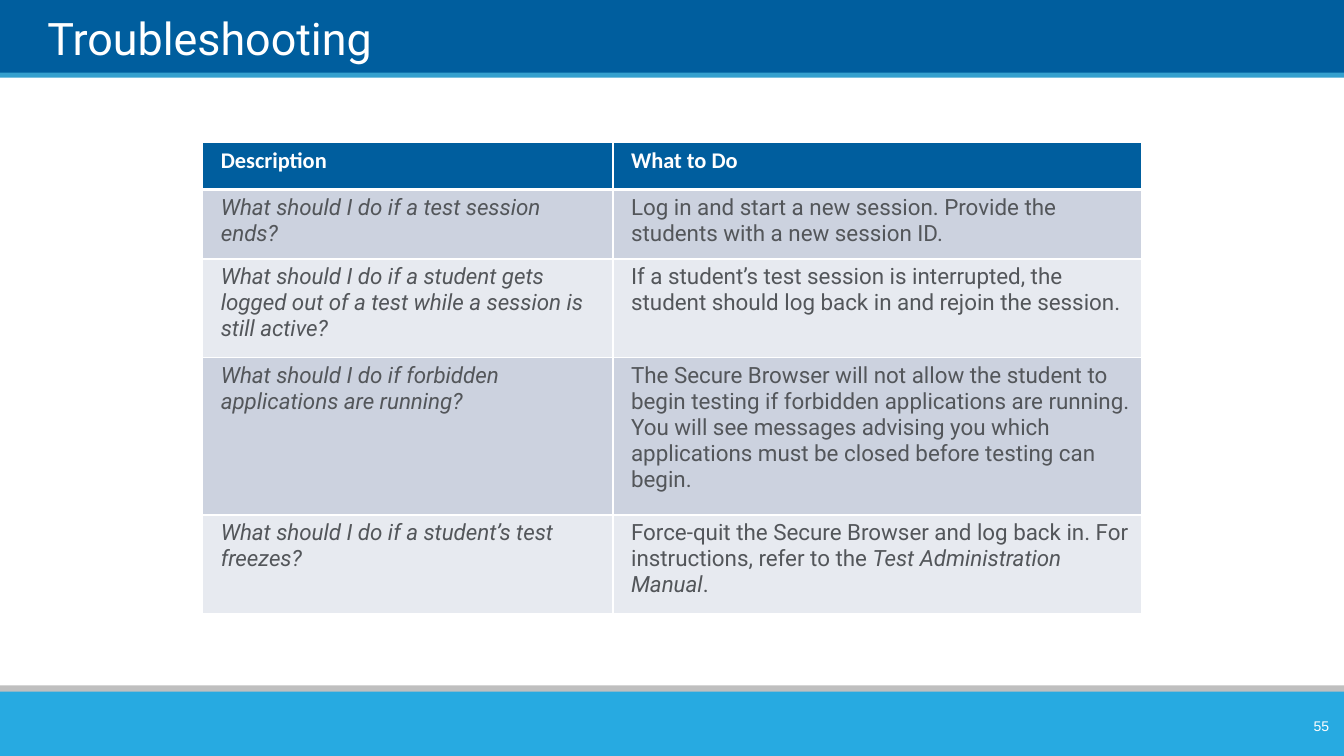
from dataclasses import dataclass

from lxml.etree import SubElement
from pptx import Presentation
from pptx.dml.color import RGBColor as RGB
from pptx.enum.shapes import MSO_SHAPE as Shape
from pptx.enum.text import MSO_ANCHOR as Anchor, MSO_AUTO_SIZE as AutoSize, PP_ALIGN as Align
from pptx.oxml.ns import qn
from pptx.util import Inches, Pt

WIDTH, HEIGHT = Inches(13.33), Inches(7.5)


@dataclass(frozen=True)
class Theme:
    navy: str = "005E9E"
    blue: str = "35A0CE"
    sky: str = "27AAE1"
    grey: str = "BFBFBF"
    white: str = "FFFFFF"
    ink: str = "53565A"
    bands: tuple = ("CCD2DF", "E7EAF0")
    title_size: int = 32
    table_size: int = 16
    number_size: int = 10
    body_font: str = "Roboto"
    header_font: str = "Calibri"
    number_font: str = "Arial"


THEME = Theme()

BARS = [
    (0, 9.87, THEME.navy),
    (9.6, 0.67, THEME.blue),
    (90.67, 1.87, THEME.grey),
    (91.47, 8.53, THEME.sky),
]
COLUMNS = [30.53, 39.31]
ROWS = [6.27, 9.2, 13.07, 20.8, 13.07]
HEADERS = ["Description", "What to Do"]
ISSUES = [
    ("What should I do if a test session ends?",
     [("Log in and start a new session. Provide the students with a new session ID.", False)]),
    ("What should I do if a student gets logged out of a test while a session is still active?",
     [("If a student’s test session is interrupted, the student should log back in "
       "and rejoin the session.", False)]),
    ("What should I do if forbidden applications are running?",
     [("The Secure Browser will not allow the student to begin testing if forbidden "
       "applications are running. You will see messages advising you which applications "
       "must be closed before testing can begin.", False)]),
    ("What should I do if a student’s test freezes?",
     [("Force-quit the Secure Browser and log back in. For instructions, refer to the ", False),
      ("Test Administration Manual", True), (".", False)]),
]


def across(percent):
    return round(WIDTH * percent / 100)


def down(percent):
    return round(HEIGHT * percent / 100)


def box(x, y, w, h):
    return across(x), down(y), across(w), down(h)


def add_run(p, text, size, font, color, bold=False, italic=False):
    r = p.add_run()
    r.text = text
    r.font.size, r.font.name = Pt(size), font
    r.font.bold, r.font.italic = bold, italic
    r.font.color.rgb = RGB.from_string(color)


def add_bar(slide, top, height, color):
    sp = slide.shapes.add_shape(Shape.RECTANGLE, *box(0, top, 100, height))
    sp.shadow.inherit = False
    sp.fill.solid()
    sp.fill.fore_color.rgb = RGB.from_string(color)
    sp.line.fill.background()


def set_title(slide, text):
    sp = slide.shapes.title
    sp.left, sp.top, sp.width, sp.height = box(3.53, 0.93, 90.4, 7.6)
    tf = sp.text_frame
    tf.auto_size, tf.vertical_anchor = AutoSize.NONE, Anchor.BOTTOM
    tf.margin_left = tf.margin_right = tf.margin_top = tf.margin_bottom = 0
    p = tf.paragraphs[0]
    p.alignment = Align.LEFT
    add_run(p, text, THEME.title_size, THEME.body_font, THEME.white)
    slide.shapes._spTree.append(sp._element)


def set_borders(cell, bottom):
    tcPr = cell._tc.get_or_add_tcPr()
    for side, width in (("L", 1), ("R", 1), ("T", 1), ("B", bottom)):
        ln = SubElement(tcPr, qn(f"a:ln{side}"), w=str(Pt(width)))
        fill = SubElement(ln, qn("a:solidFill"))
        SubElement(fill, qn("a:srgbClr"), val=THEME.white)


def fill_cell(cell, runs, fill, font, color, bold=False, bottom=1):
    set_borders(cell, bottom)
    cell.fill.solid()
    cell.fill.fore_color.rgb = RGB.from_string(fill)
    cell.margin_left = cell.margin_right = Inches(0.1)
    cell.margin_top = cell.margin_bottom = Inches(0.05)
    p = cell.text_frame.paragraphs[0]
    p._p.get_or_add_pPr().set("marL", str(Inches(0.08)))
    p.space_after = Pt(4)
    for text, italic in runs:
        add_run(p, text, THEME.table_size, font, color, bold, italic)


def add_issue_table(slide):
    frame = slide.shapes.add_table(len(ROWS), len(COLUMNS),
                                   *box(15.08, 18.8, sum(COLUMNS), sum(ROWS)))
    table = frame.table
    table.horz_banding = False
    for column, width in zip(table.columns, COLUMNS):
        column.width = across(width)
    for row, height in zip(table.rows, ROWS):
        row.height = down(height)
    for c, header in enumerate(HEADERS):
        fill_cell(table.cell(0, c), [(header, False)], THEME.navy,
                  THEME.header_font, THEME.white, bold=True, bottom=3)
    for i, (question, answer) in enumerate(ISSUES):
        for c, runs in enumerate(([(question, True)], answer)):
            fill_cell(table.cell(i + 1, c), runs, THEME.bands[i % 2],
                      THEME.body_font, THEME.ink)


def add_page_number(slide, number):
    tf = slide.shapes.add_textbox(*box(93.85, 94, 5.78, 4)).text_frame
    tf.word_wrap = True
    tf.vertical_anchor = Anchor.MIDDLE
    p = tf.paragraphs[0]
    p.alignment = Align.RIGHT
    add_run(p, number, THEME.number_size, THEME.number_font, THEME.white)


def main():
    prs = Presentation()
    prs.slide_width, prs.slide_height = WIDTH, HEIGHT
    slide = prs.slides.add_slide(prs.slide_layouts[5])
    for bar in BARS:
        add_bar(slide, *bar)
    set_title(slide, "Troubleshooting")
    add_issue_table(slide)
    add_page_number(slide, "55")
    prs.save("out.pptx")


if __name__ == "__main__":
    main()
